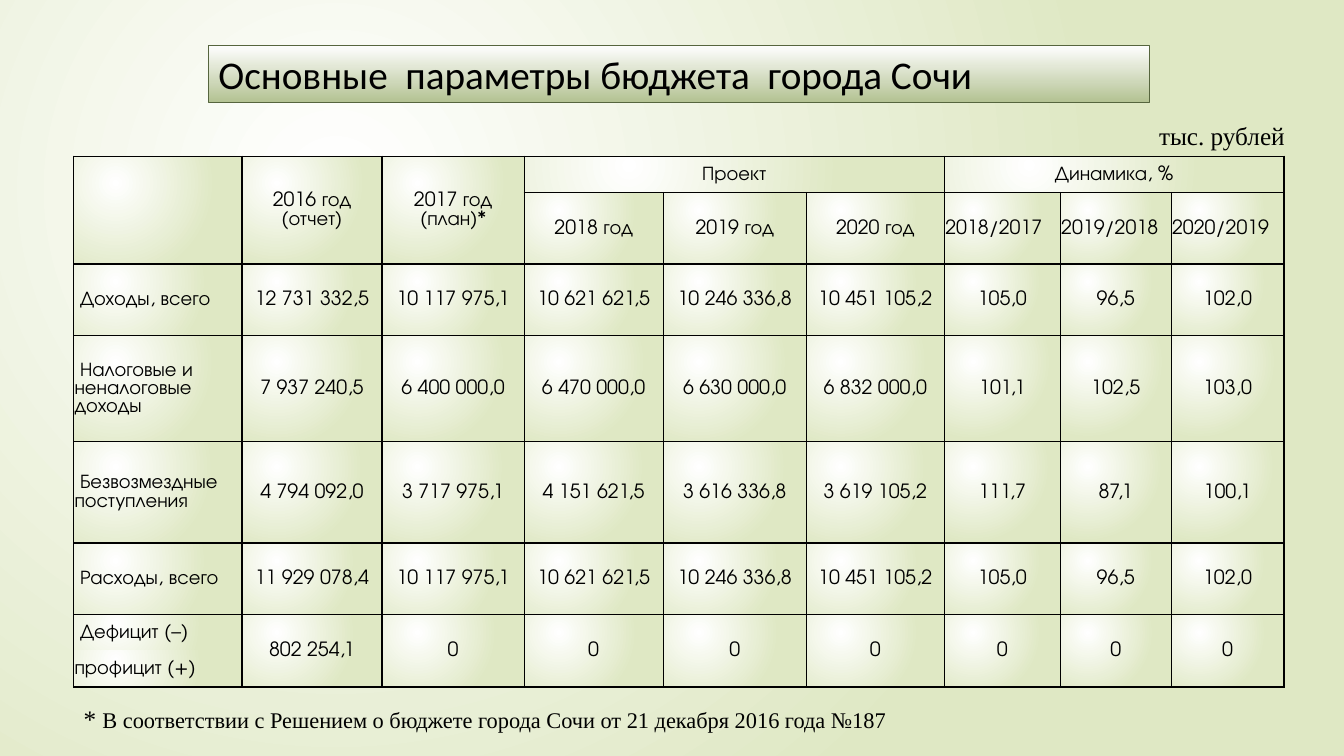
import lxml.etree
import pptx
import pptx.dml.color
import pptx.enum.shapes
import pptx.enum.text
import pptx.oxml
import pptx.oxml.ns
import pptx.util

Pt = pptx.util.Pt
qn = pptx.oxml.ns.qn
ALIGN = pptx.enum.text.PP_ALIGN
MIDDLE = pptx.enum.text.MSO_ANCHOR.MIDDLE
NAMESPACE = 'xmlns:a="http://schemas.openxmlformats.org/drawingml/2006/main"'
GLOW = (
    f'<a:path {NAMESPACE} path="circle">'
    '<a:fillToRect l="50000" t="50000" r="100000" b="100000"/></a:path>'
)


def color(value):
    return pptx.dml.color.RGBColor.from_string(value)


def fill_gradient(fill, element, start, end, radial=True):
    """Blend two colours, from a glow at the upper left or from top to bottom."""
    fill.gradient()
    for stop, value in zip(fill.gradient_stops, (start, end)):
        stop.color.rgb = color(value)
    if radial:
        linear = next(element.iter(qn("a:lin")))
        linear.getparent().replace(linear, pptx.oxml.parse_xml(GLOW))
    else:
        fill.gradient_angle = 270


presentation = pptx.Presentation()
presentation.slide_width, presentation.slide_height = Pt(960), Pt(540)
slide = presentation.slides.add_slide(presentation.slide_layouts[6])
fill_gradient(slide.background.fill, slide.element, "FFFFFF", "DFE8C4")

# Budget table
column_widths = [120.2, 100.1, 101.5, 99.4, 102.2, 98.6, 82.8, 79.2, 80.6]
row_heights = [25.9, 51.1, 51.1, 75.6, 72.7, 51.1, 25.9, 25.9]
rows = [
    ["", "2016 год (отчет)", "2017 год (план)*", "Проект", "", "", "Динамика, %", "", ""],
    ["", "", "", "2018 год", "2019 год", "2020 год", "2018/2017", "2019/2018", "2020/2019"],
    [" Доходы, всего", "12 731 332,5", "10 117 975,1", "10 621 621,5", "10 246 336,8",
     "10 451 105,2", "105,0", "96,5", "102,0"],
    [" Налоговые и неналоговые доходы", "7 937 240,5", "6 400 000,0", "6 470 000,0",
     "6 630 000,0", "6 832 000,0", "101,1", "102,5", "103,0"],
    [" Безвозмездные поступления", "4 794 092,0", "3 717 975,1", "4 151 621,5",
     "3 616 336,8", "3 619 105,2", "111,7", "87,1", "100,1"],
    [" Расходы, всего", "11 929 078,4", "10 117 975,1", "10 621 621,5", "10 246 336,8",
     "10 451 105,2", "105,0", "96,5", "102,0"],
    [" Дефицит (–)", "802 254,1"] + ["0"] * 7,
    ["профицит (+)"] + [""] * 8,
]
cell_format = {
    "margin_left": Pt(0.7), "margin_right": Pt(0.7), "margin_top": Pt(0.7),
    "margin_bottom": 0, "vertical_anchor": MIDDLE,
}
table = slide.shapes.add_table(
    len(rows), len(column_widths), Pt(52.6), Pt(111.6),
    Pt(sum(column_widths)), Pt(sum(row_heights)),
).table
table.first_row = table.horz_banding = False
for column, width in zip(table.columns, column_widths):
    column.width = Pt(width)
for row, height in zip(table.rows, row_heights):
    row.height = Pt(height)

for row_index, texts in enumerate(rows):
    for column_index, text in enumerate(texts):
        cell = table.cell(row_index, column_index)
        for name, value in cell_format.items():
            setattr(cell, name, value)
        fill_gradient(cell.fill, cell._tc, "FFFFFF", "DFE8C4")

        # The deficit and surplus labels have no line between them
        open_side = {(6, 0): "B", (7, 0): "T"}.get((row_index, column_index))
        properties = cell._tc.get_or_add_tcPr()
        for position, side in enumerate("LRTB"):
            paint = "<a:noFill/>" if side == open_side else (
                '<a:solidFill><a:srgbClr val="000000"/></a:solidFill>')
            properties.insert(position, pptx.oxml.parse_xml(
                f'<a:ln{side} {NAMESPACE} w="12700">{paint}</a:ln{side}>'))

        paragraph = cell.text_frame.paragraphs[0]
        ratio_heading = row_index == 1 and column_index >= 6
        left = column_index == 0 or ratio_heading
        paragraph.alignment = ALIGN.LEFT if left else ALIGN.CENTER
        paragraph.font.size = Pt(14)
        if text:
            run = paragraph.add_run()
            run.text = text
            run.font.size = Pt(14)
            run.font.name = "TeX Gyre Adventor"
            run.font.color.rgb = color("000000")

for column_index in range(1, 9):
    table.cell(6, column_index).merge(table.cell(7, column_index))
for column_index in range(3):
    table.cell(0, column_index).merge(table.cell(1, column_index))
for column_index in (3, 6):
    table.cell(0, column_index).merge(table.cell(0, column_index + 2))

# Title bar
title = slide.shapes.add_shape(
    pptx.enum.shapes.MSO_SHAPE.RECTANGLE, Pt(149), Pt(32.4), Pt(671.8), Pt(41))
title.shadow.inherit = False
fill_gradient(title.fill, title.element, "FEFEFE", "B3C292", radial=False)
title.line.color.rgb = color("56653E")
title.line.width = Pt(0.75)

# Title, unit and footnote texts
units = slide.shapes.add_textbox(Pt(820.8), Pt(82.1), Pt(128.2), Pt(28.8))
footnote = slide.shapes.add_textbox(Pt(52.6), Pt(499), Pt(864.7), Pt(28.8))
captions = [
    (title, "Calibri", [("Основные  параметры бюджета  города Сочи", 28)]),
    (units, "Times New Roman", [("тыс. рублей", 18)]),
    (footnote, "Times New Roman", [
        ("* ", 18),
        ("В соответствии с Решением о бюджете города Сочи от 21 декабря 2016 года №187", 16),
    ]),
]
for shape, font_name, runs in captions:
    shape.text_frame.word_wrap = True
    paragraph = shape.text_frame.paragraphs[0]
    paragraph.alignment = ALIGN.LEFT
    for text, size in runs:
        run = paragraph.add_run()
        run.text = text
        run.font.name = font_name
        run.font.size = Pt(size)
        run.font.color.rgb = color("000000")

presentation.save("out.pptx")
